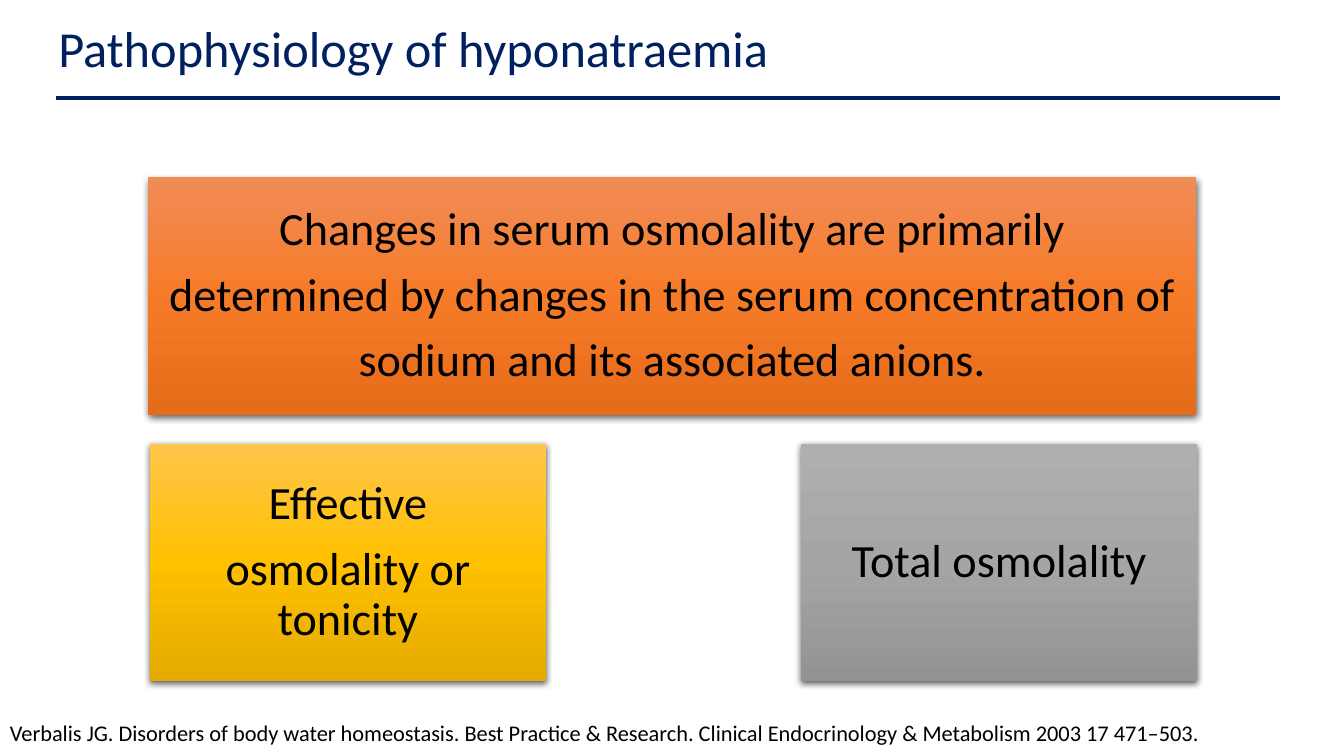
from dataclasses import dataclass

from pptx import Presentation
from pptx.dml.color import RGBColor
from pptx.enum.shapes import MSO_CONNECTOR, MSO_SHAPE
from pptx.enum.text import MSO_ANCHOR, MSO_AUTO_SIZE, PP_ALIGN
from pptx.oxml import parse_xml
from pptx.oxml.ns import nsdecls, qn
from pptx.util import Cm, Pt


@dataclass(frozen=True)
class Theme:
    font: str = "Calibri"
    navy: str = "002060"
    black: str = "000000"
    orange: tuple = ("F18C57", "F67B28", "E56C19")
    gold: tuple = ("FFC64B", "FFC000", "E3AB00")
    grey: tuple = ("AFAFAF", "A5A5A5", "939393")
    title: int = 36
    body: int = 33
    cite: int = 16


THEME = Theme()


def write(frame, *lines, size, color=THEME.black, align=PP_ALIGN.LEFT,
          anchor=MSO_ANCHOR.TOP, pad=(0.25, 0.13), gap=0, lead=1.0):
    """Fill a text frame with one paragraph per line."""
    frame.word_wrap = True
    frame.auto_size = MSO_AUTO_SIZE.NONE
    frame.vertical_anchor = anchor
    frame.margin_left = frame.margin_right = Cm(pad[0])
    frame.margin_top = frame.margin_bottom = Cm(pad[1])
    for i, line in enumerate(lines):
        para = frame.paragraphs[0] if i == 0 else frame.add_paragraph()
        para.alignment = align
        para.line_spacing = lead
        para.space_after = Pt(gap)
        run = para.add_run()
        run.text = line
        run.font.name = THEME.font
        run.font.size = Pt(size)
        run.font.color.rgb = RGBColor.from_string(color)


def shade(shape, colors):
    """Three-stop gradient, running from top to bottom."""
    shape.fill.gradient()
    shape.fill.gradient_angle = 270
    stops = shape.element.spPr.find(qn("a:gradFill")).find(qn("a:gsLst"))
    for stop in list(stops):
        stops.remove(stop)
    for i, color in enumerate(colors):
        stops.append(parse_xml(
            f'<a:gs {nsdecls("a")} pos="{i * 50000}">'
            f'<a:srgbClr val="{color}"/></a:gs>'))


def effect(shape, inner=""):
    """Set the effect list; an empty one removes the shadow."""
    shape.element.spPr.append(parse_xml(
        f'<a:effectLst {nsdecls("a")}>{inner}</a:effectLst>'))


def card(slide, left, top, width, colors, *lines):
    box = slide.shapes.add_shape(
        MSO_SHAPE.RECTANGLE, Cm(left), Cm(top), Cm(width), Cm(5.99))
    shade(box, colors)
    box.line.fill.background()
    effect(box, f'<a:outerShdw blurRad="{Pt(4.5)}" dist="{Pt(1.5)}" '
                'dir="5400000" algn="ctr" rotWithShape="0">'
                f'<a:srgbClr val="{THEME.black}"><a:alpha val="63000"/>'
                '</a:srgbClr></a:outerShdw>')
    write(box.text_frame, *lines, size=THEME.body, align=PP_ALIGN.CENTER,
          anchor=MSO_ANCHOR.MIDDLE, pad=(0.35, 0.35), gap=11, lead=0.9)


def head(slide, text):
    title = slide.shapes.title
    title.left, title.top = Cm(1.22), Cm(0.3)
    title.width, title.height = Cm(31.42), Cm(1.8)
    write(title.text_frame, text, size=THEME.title, color=THEME.navy)


def rule(slide, left, right, top):
    line = slide.shapes.add_connector(
        MSO_CONNECTOR.STRAIGHT, Cm(left), Cm(top), Cm(right), Cm(top))
    line.line.color.rgb = RGBColor.from_string(THEME.navy)
    line.line.width = Pt(3)
    effect(line)


def cite(slide, text):
    box = slide.shapes.add_textbox(Cm(0), Cm(17.98), Cm(31.42), Cm(0.94))
    write(box.text_frame, text, size=THEME.cite)


def main():
    deck = Presentation()
    deck.slide_width, deck.slide_height = Cm(33.87), Cm(19.05)
    slide = deck.slides.add_slide(deck.slide_layouts[5])

    # Statement above, its two kinds below
    card(slide, 3.73, 4.47, 26.42, THEME.orange,
         "Changes in serum osmolality are primarily",
         "determined by changes in the serum concentration of",
         "sodium and its associated anions.")
    card(slide, 20.19, 11.18, 9.98, THEME.grey, "Total osmolality")
    card(slide, 3.78, 11.18, 9.98, THEME.gold,
         "Effective", "osmolality or tonicity")

    # Source, title and rule
    cite(slide, "Verbalis JG. Disorders of body water homeostasis. "
                "Best Practice & Research. Clinical Endocrinology & "
                "Metabolism 2003 17 471–503.")
    head(slide, "Pathophysiology of hyponatraemia")
    rule(slide, 1.4, 32.26, 2.46)

    deck.save("out.pptx")


if __name__ == "__main__":
    main()
